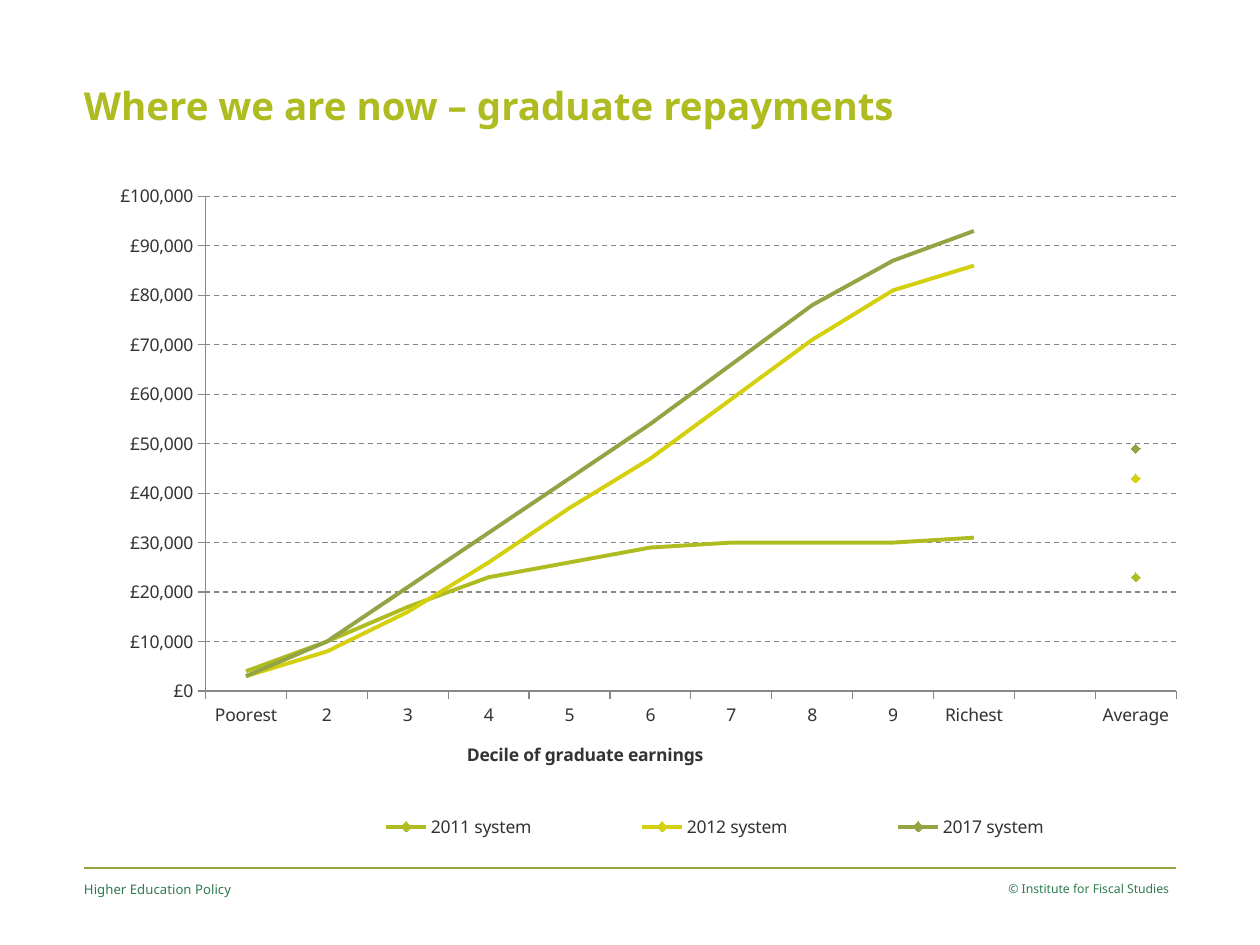
from dataclasses import dataclass
from typing import Optional

from lxml import etree
from pptx import Presentation
from pptx.chart.data import CategoryChartData
from pptx.dml.color import RGBColor
from pptx.enum.chart import XL_CHART_TYPE, XL_LEGEND_POSITION, XL_MARKER_STYLE, XL_TICK_MARK
from pptx.enum.dml import MSO_LINE
from pptx.enum.shapes import MSO_CONNECTOR
from pptx.enum.text import MSO_ANCHOR, MSO_AUTO_SIZE, PP_ALIGN
from pptx.oxml import parse_xml
from pptx.oxml.ns import nsdecls, qn
from pptx.util import Emu, Pt

LINE_MARKERS = XL_CHART_TYPE.LINE_MARKERS
LEGEND_BOTTOM = XL_LEGEND_POSITION.BOTTOM
DIAMOND, NO_MARKER = XL_MARKER_STYLE.DIAMOND, XL_MARKER_STYLE.NONE
TICK_OUTSIDE = XL_TICK_MARK.OUTSIDE
DASH = MSO_LINE.DASH
STRAIGHT = MSO_CONNECTOR.STRAIGHT
TOP, NO_AUTOFIT = MSO_ANCHOR.TOP, MSO_AUTO_SIZE.NONE
LEFT, RIGHT = PP_ALIGN.LEFT, PP_ALIGN.RIGHT

LIME = RGBColor(0xAF, 0xBC, 0x21)
YELLOW = RGBColor(0xD4, 0xD0, 0x0E)
OLIVE = RGBColor(0x93, 0xA4, 0x45)
GREEN = RGBColor(0x31, 0x7B, 0x52)
DARK_GREY = RGBColor(0x33, 0x33, 0x33)
AXIS_GREY = RGBColor(0x87, 0x87, 0x87)

FONT = "Noto Sans"
PX_PER_INCH = 126
MARGIN_LEFT, MARGIN_RIGHT = 84, 1176
DECILES = ["Poorest", "2", "3", "4", "5", "6", "7", "8", "9", "Richest"]
CATEGORIES = DECILES + ["", "Average"]


@dataclass(frozen=True)
class Box:
    left: int
    top: int
    width: int
    height: int


@dataclass(frozen=True)
class TextStyle:
    size: float
    color: RGBColor
    bold: bool = False
    align: PP_ALIGN = LEFT
    right_inset: int = 0


@dataclass(frozen=True)
class FeeSystem:
    """Repayments in thousands of pounds, by decile and on average."""
    name: str
    color: RGBColor
    deciles: list[int]
    average: int


SYSTEMS = [
    FeeSystem("2011 system", LIME, [4, 10, 17, 23, 26, 29, 30, 30, 30, 31], 23),
    FeeSystem("2012 system", YELLOW, [3, 8, 16, 26, 37, 47, 59, 71, 81, 86], 43),
    FeeSystem("2017 system", OLIVE, [3, 10, 21, 32, 43, 54, 66, 78, 87, 93], 49),
]
FOOTERS = [
    ("© Institute for Fiscal Studies", Box(958, 881, 218, 50),
     TextStyle(7, GREEN, align=RIGHT, right_inset=7)),
    ("Higher Education Policy", Box(MARGIN_LEFT, 881, 399, 50), TextStyle(7.5, GREEN)),
]


def px(length: int) -> Emu:
    return Emu(round(length * 914400 / PX_PER_INCH))


def place(shape, box: Box) -> None:
    shape.left, shape.top = px(box.left), px(box.top)
    shape.width, shape.height = px(box.width), px(box.height)


def write_text(shape, text: str, style: TextStyle) -> None:
    frame = shape.text_frame
    frame.word_wrap = True
    frame.auto_size = NO_AUTOFIT
    frame.vertical_anchor = TOP
    frame.margin_left = frame.margin_top = frame.margin_bottom = 0
    frame.margin_right = px(style.right_inset)
    paragraph = frame.paragraphs[0]
    paragraph.alignment = style.align
    run = paragraph.add_run()
    run.text = text
    run.font.name, run.font.size = FONT, Pt(style.size)
    run.font.bold, run.font.color.rgb = style.bold, style.color


def add_footer_rule(slide) -> None:
    rule = slide.shapes.add_connector(
        STRAIGHT, px(MARGIN_LEFT), px(868), px(MARGIN_RIGHT), px(868))
    rule.line.color.rgb, rule.line.width = OLIVE, Pt(0.75)
    etree.SubElement(rule._element.spPr, qn("a:effectLst"))


def set_layout(element, index: int, x: float, y: float,
               width: Optional[float] = None, height: Optional[float] = None,
               inner: bool = False) -> None:
    """Fix a chart part at fractions of the chart area; index is used if it has no layout."""
    existing = element.find(qn("c:layout"))
    if existing is not None:
        index = element.index(existing)
        element.remove(existing)
    target = '<c:layoutTarget val="inner"/>' if inner else ""
    modes = '<c:xMode val="edge"/><c:yMode val="edge"/>'
    values = "".join(f'<c:{tag} val="{value}"/>' for tag, value in
                     zip("xywh", (x, y, width, height)) if value is not None)
    element.insert(index, parse_xml(
        f'<c:layout {nsdecls("c")}><c:manualLayout>{target}{modes}{values}'
        '</c:manualLayout></c:layout>'))


def repayment_data() -> CategoryChartData:
    data = CategoryChartData()
    data.categories = CATEGORIES
    for number, system in enumerate(SYSTEMS, 1):
        data.add_series(f"Series {number}",
                        [value * 1000 for value in system.deciles] + [None, None])
    for system in SYSTEMS:
        data.add_series(system.name, [None] * (len(CATEGORIES) - 1) + [system.average * 1000])
    return data


def style_series(plot) -> None:
    for index, series in enumerate(plot.series):
        color = SYSTEMS[index % len(SYSTEMS)].color
        series.smooth = False
        series.format.line.color.rgb, series.format.line.width = color, Pt(2.25)
        if index < len(SYSTEMS):
            series.marker.style = NO_MARKER
            continue
        series.marker.style, series.marker.size = DIAMOND, 5
        series.marker.format.fill.solid()
        series.marker.format.fill.fore_color.rgb = color
        series.marker.format.line.color.rgb = color


def style_axes(chart) -> None:
    for axis in (chart.category_axis, chart.value_axis):
        axis.major_tick_mark = TICK_OUTSIDE
        axis.format.line.color.rgb, axis.format.line.width = AXIS_GREY, Pt(0.75)
    values = chart.value_axis
    values.minimum_scale, values.maximum_scale, values.major_unit = 0, 100000, 10000
    values.tick_labels.number_format = '"£"#,##0'
    values.tick_labels.number_format_is_linked = False
    grid = values.major_gridlines.format.line
    grid.color.rgb, grid.width, grid.dash_style = AXIS_GREY, Pt(0.75), DASH

    title = chart.category_axis.axis_title
    run = title.text_frame.paragraphs[0].add_run()
    run.text = "Decile of graduate earnings"
    run.font.name, run.font.size = FONT, Pt(10)
    run.font.bold, run.font.color.rgb = True, DARK_GREY
    set_layout(title._element, 1, 0.35, 0.83)


def add_legend(chart) -> None:
    """Show only the three named systems, not the decile lines."""
    chart.has_legend = True
    legend = chart.legend
    legend.position = LEGEND_BOTTOM
    legend.include_in_layout = False
    for index in range(len(SYSTEMS)):
        legend._element.insert(1 + index, parse_xml(
            f'<c:legendEntry {nsdecls("c")}><c:idx val="{index}"/>'
            '<c:delete val="1"/></c:legendEntry>'))
    set_layout(legend._element, 1 + len(SYSTEMS), 0.19, 0.92, 0.76, 0.07)


def add_repayment_chart(slide, box: Box) -> None:
    chart = slide.shapes.add_chart(
        LINE_MARKERS, px(box.left), px(box.top), px(box.width), px(box.height),
        repayment_data()).chart
    chart.has_title = False
    chart.font.name, chart.font.size = FONT, Pt(10)
    chart.font.color.rgb = DARK_GREY
    plot = chart.plots[0]
    plot.vary_by_categories = False
    set_layout(plot._element.getparent(), 0, 0.124, 0.072, 0.85, 0.693, inner=True)
    style_series(plot)
    style_axes(chart)
    add_legend(chart)


def main() -> None:
    presentation = Presentation()
    presentation.slide_width, presentation.slide_height = px(1260), px(945)
    slide = presentation.slides.add_slide(presentation.slide_layouts[5])
    add_footer_rule(slide)
    title = slide.shapes.title
    place(title, Box(MARGIN_LEFT, 82, 903, 55))
    write_text(title, "Where we are now – graduate repayments", TextStyle(22, LIME, bold=True))
    for text, box, style in FOOTERS:
        footer = slide.shapes.add_textbox(0, 0, 0, 0)
        place(footer, box)
        write_text(footer, text, style)
    add_repayment_chart(slide, Box(64, 145, 1142, 714))
    presentation.save("out.pptx")


if __name__ == "__main__":
    main()
